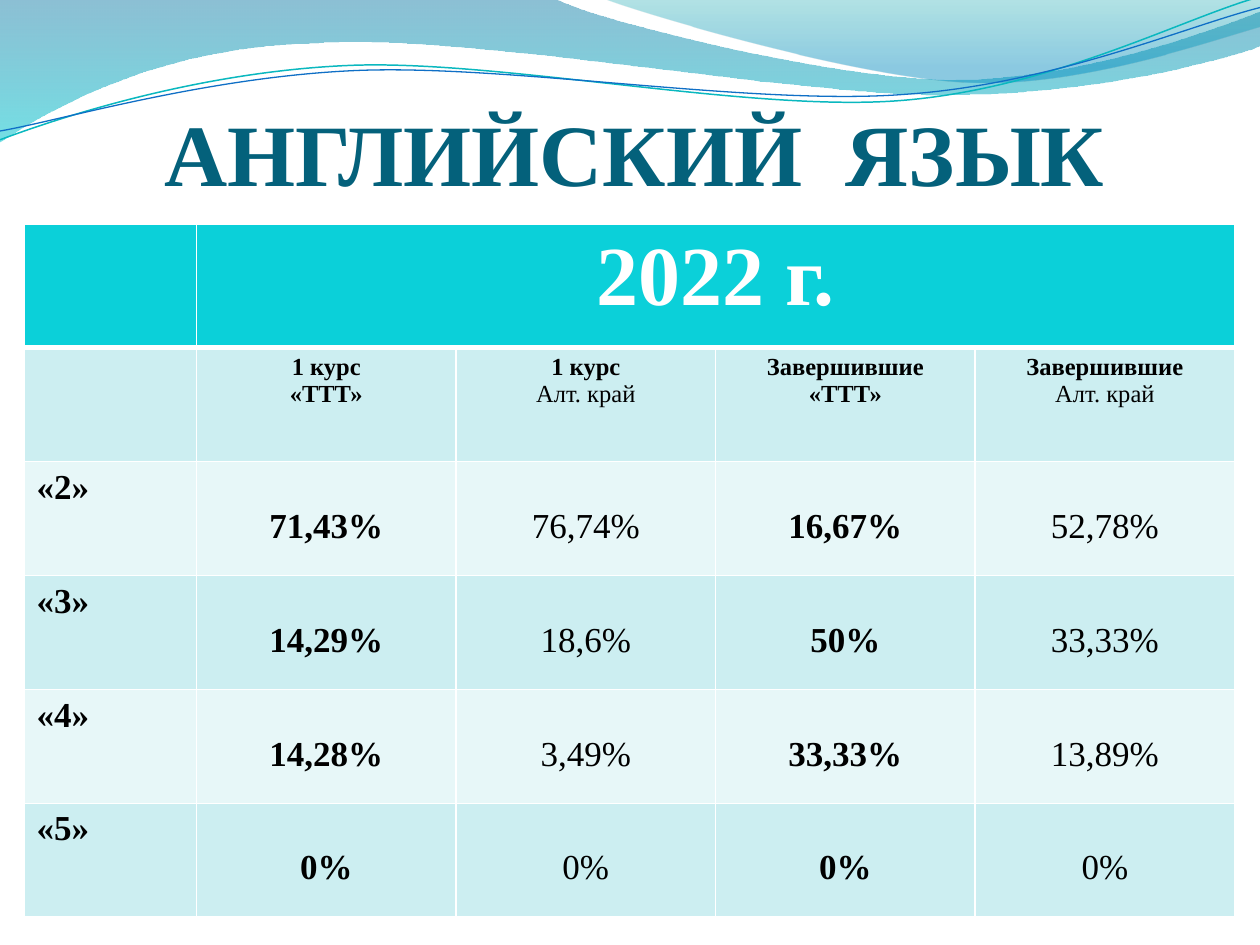
from lxml import etree
from pptx import Presentation
from pptx.dml.color import RGBColor
from pptx.enum.text import MSO_ANCHOR, PP_ALIGN
from pptx.oxml.ns import qn
from pptx.util import Inches, Pt

CENTER, LEFT, BOTTOM = PP_ALIGN.CENTER, PP_ALIGN.LEFT, MSO_ANCHOR.BOTTOM
FONT = "Times New Roman"
WHITE = RGBColor(0xFF, 0xFF, 0xFF)
BLACK = RGBColor(0, 0, 0)
TITLE_COLOR = RGBColor(0x04, 0x61, 0x7B)
HEADER_FILL = RGBColor(0x0B, 0xD0, 0xD9)
DARK_BAND = RGBColor(0xCC, 0xEE, 0xF1)
LIGHT_BAND = RGBColor(0xE7, 0xF7, 0xF8)
DEEP_BLUE = RGBColor(0x00, 0x74, 0xA1)
AQUA = RGBColor(0x00, 0xC6, 0xCF)
TEAL = RGBColor(0x00, 0xA1, 0xA9)
SKY = RGBColor(0x00, 0x8B, 0xBF)
TEAL_LINE = RGBColor(0x0A, 0xB8, 0xBF)
BLUE_LINE = RGBColor(0x0F, 0x6F, 0xC6)

TITLE = "АНГЛИЙСКИЙ  ЯЗЫК"
YEAR = "2022 г."
GROUPS = [("1 курс", "«ТТТ»"), ("1 курс", "Алт. край"),
          ("Завершившие", "«ТТТ»"), ("Завершившие", "Алт. край")]
RESULTS = [
    ("«2»", "71,43%", "76,74%", "16,67%", "52,78%"),
    ("«3»", "14,29%", "18,6%", "50%", "33,33%"),
    ("«4»", "14,28%", "3,49%", "33,33%", "13,89%"),
    ("«5»", "0%", "0%", "0%", "0%"),
]
WAVES = [
    ([(0, 0), (4.4, -0.01), (4.76, 0.17, 6.64, 0.63, 7.58, 0.63),
      (8.53, 0.63, 9.58, 0.26, 10, 0.09), (10.01, 0.36),
      (9.83, 0.44, 8.7, 0.76, 7.46, 0.75), (6.22, 0.75, 3.82, 0.28, 2.57, 0.34),
      (1.29, 0.36, 0.46, 0.83, -0.01, 1.13)],
     [(0, DEEP_BLUE, 45), (1, AQUA, 55)]),
    ([(4.79, -0.01), (5.09, 0.11, 6.82, 0.62, 7.69, 0.65),
      (8.56, 0.69, 9.61, 0.32, 10, 0.21), (10, 0)],
     [(0, TEAL, 30), (0.8, SKY, 45)]),
]
RIBBONS = [
    ([(0, 1.11), (0.48, 0.93, 1.58, 0.57, 2.77, 0.52),
      (3.95, 0.47, 5.93, 0.89, 7.13, 0.8), (8.33, 0.71, 9.38, 0.15, 9.98, -0.02)],
     TEAL_LINE, 0.85),
    ([(0, 1.04), (0.47, 0.96, 1.64, 0.61, 2.83, 0.56),
      (4.03, 0.51, 5.97, 0.84, 7.17, 0.75), (8.36, 0.67, 9.41, 0.21, 10, 0.06)],
     BLUE_LINE, 0.75),
]
TABLE_HEIGHT, HEADER_HEIGHT = 5.5, 0.98


def add_path(slide, path, close):
    ends = [(Inches(segment[-2]), Inches(segment[-1])) for segment in path]
    builder = slide.shapes.build_freeform(*ends[0])
    builder.add_line_segments(ends[1:], close=close)
    shape = builder.convert_to_shape()
    shape.shadow.inherit = False
    steps = list(shape._element.spPr.iter(qn("a:lnTo")))
    for step, segment in zip(steps, path[1:]):
        if len(segment) == 6:
            curve = etree.Element(qn("a:cubicBezTo"))
            for x, y in zip(segment[::2], segment[1::2]):
                etree.SubElement(curve, qn("a:pt"), x=str(Inches(x) - shape.left),
                                 y=str(Inches(y) - shape.top))
            step.getparent().replace(step, curve)
    return shape


def add_wave(slide, path, stops):
    shape = add_path(slide, path, True)
    shape.line.fill.background()
    shape.fill.gradient()
    shape.fill.gradient_angle = 270
    for stop, (position, color, _) in zip(shape.fill.gradient_stops, stops):
        stop.position = position
        stop.color.rgb = color
    colors = shape._element.spPr.iter(qn("a:srgbClr"))
    for color, (_, _, opacity) in zip(colors, stops):
        etree.SubElement(color, qn("a:alpha"), val=str(opacity * 1000))


def add_ribbon(slide, path, color, width):
    shape = add_path(slide, path, False)
    shape.fill.background()
    shape.line.color.rgb = color
    shape.line.width = Pt(width)


def write(text_frame, lines, size, color, alignment=CENTER):
    text_frame.text = "\n".join(text for text, _ in lines)
    for paragraph, (_, bold) in zip(text_frame.paragraphs, lines):
        paragraph.alignment = alignment
        for run in paragraph.runs:
            run.font.name = FONT
            run.font.size = Pt(size)
            run.font.bold = bold
            run.font.color.rgb = color


def set_borders(cell, top, bottom):
    properties = cell._tc.get_or_add_tcPr()
    sides = [("a:lnL", 1), ("a:lnR", 1), ("a:lnT", top), ("a:lnB", bottom)]
    for index, (tag, width) in enumerate(sides):
        line = etree.Element(qn(tag), w=str(Pt(width)))
        fill = etree.SubElement(line, qn("a:solidFill"))
        etree.SubElement(fill, qn("a:srgbClr"), val=str(WHITE))
        properties.insert(index, line)


def add_results_table(slide):
    row_count, column_count = len(RESULTS) + 2, len(GROUPS) + 1
    table = slide.shapes.add_table(row_count, column_count, Inches(0.19), Inches(1.78),
                                   Inches(9.61), Inches(TABLE_HEIGHT)).table
    body_height = (TABLE_HEIGHT - HEADER_HEIGHT) / (row_count - 1)
    for index, column in enumerate(table.columns):
        column.width = Inches(2.06 if index else 1.37)
    for index, row in enumerate(table.rows):
        row.height = Inches(body_height if index else HEADER_HEIGHT)
        fill = (DARK_BAND if index % 2 else LIGHT_BAND) if index else HEADER_FILL
        for cell in row.cells:
            cell.fill.solid()
            cell.fill.fore_color.rgb = fill
            set_borders(cell, 3 if index == 1 else 1, 1 if index else 3)

    table.cell(0, 1).merge(table.cell(0, column_count - 1))
    write(table.cell(0, 1).text_frame, [(YEAR, True)], 48, WHITE)
    for column, (stage, place) in enumerate(GROUPS, 1):
        lines = [(stage, True), (place, column % 2 == 1)]
        write(table.cell(1, column).text_frame, lines, 14, BLACK)
    for row, (grade, *values) in enumerate(RESULTS, 2):
        write(table.cell(row, 0).text_frame, [(grade, True)], 20, BLACK, LEFT)
        for column, value in enumerate(values, 1):
            cell = table.cell(row, column)
            cell.margin_top = Inches(0.36)
            write(cell.text_frame, [(value, column % 2 == 1)], 20, BLACK)


def add_title(slide):
    box = slide.shapes.add_textbox(Inches(0.5), Inches(0.52), Inches(9.08), Inches(1.1))
    frame = box.text_frame
    frame.word_wrap = True
    frame.vertical_anchor = BOTTOM
    frame.margin_left = frame.margin_right = frame.margin_bottom = 0
    write(frame, [(TITLE, True)], 50, TITLE_COLOR)


def main():
    presentation = Presentation()
    presentation.slide_width, presentation.slide_height = Inches(10), Inches(7.5)
    slide = presentation.slides.add_slide(presentation.slide_layouts[6])
    for path, stops in WAVES:
        add_wave(slide, path, stops)
    for path, color, width in RIBBONS:
        add_ribbon(slide, path, color, width)
    add_title(slide)
    add_results_table(slide)
    presentation.save("out.pptx")


if __name__ == "__main__":
    main()
